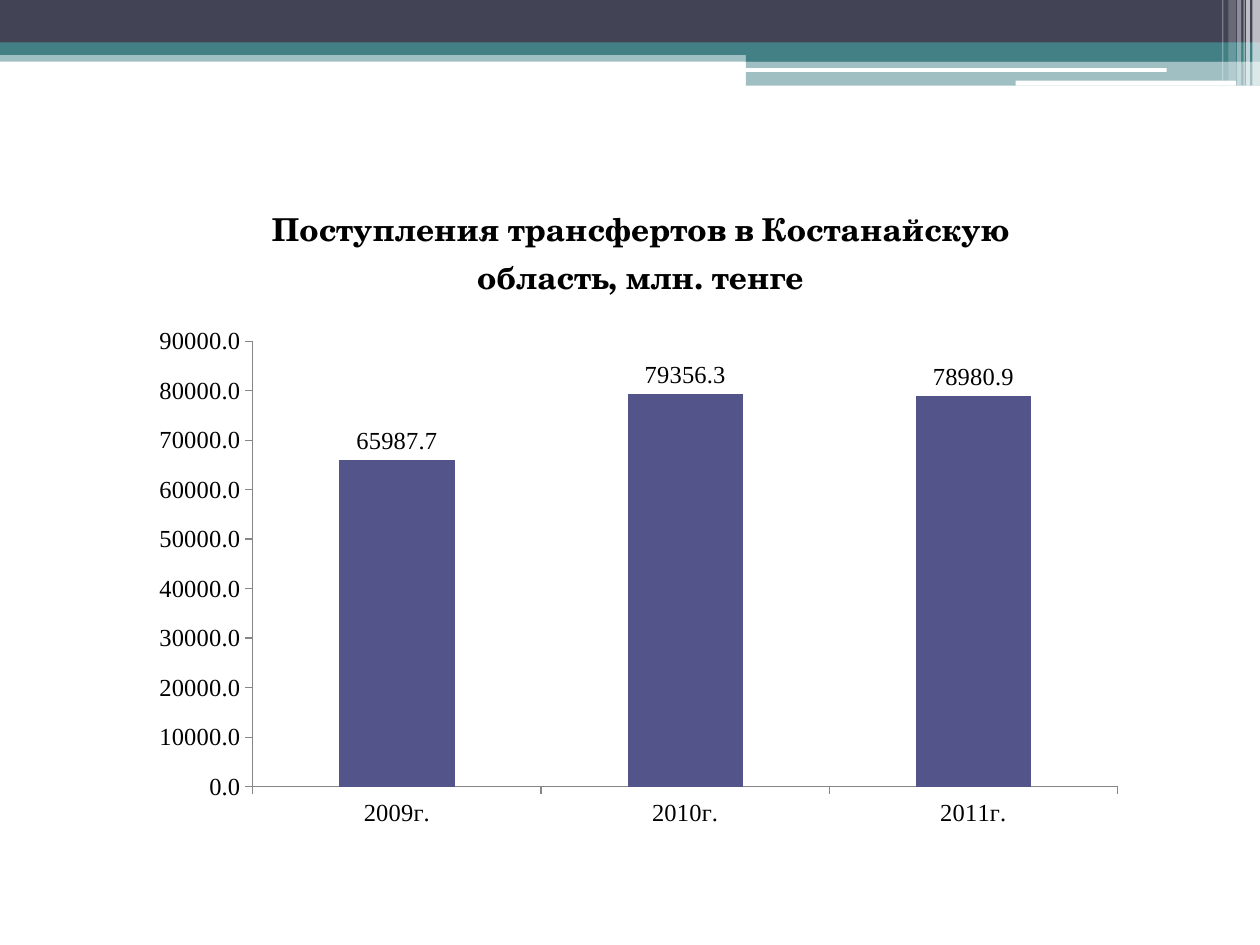
from dataclasses import dataclass

from lxml import etree
from pptx import Presentation
from pptx.chart.data import CategoryChartData
from pptx.dml.color import RGBColor as RGB
from pptx.enum.chart import XL_CHART_TYPE as ChartType
from pptx.enum.chart import XL_LABEL_POSITION as LabelPos
from pptx.enum.chart import XL_TICK_MARK as Tick
from pptx.enum.shapes import MSO_SHAPE as Shape
from pptx.oxml.ns import qn
from pptx.util import Pt


@dataclass(frozen=True)
class Theme:
    """Colours, fonts and type sizes of the slide."""
    navy: str = "424456"
    teal: str = "438086"
    white: str = "FFFFFF"
    bar: str = "53548A"
    axis: str = "868686"
    ink: str = "000000"
    title_font: str = "TeX Gyre Schola"
    label_font: str = "Times New Roman"
    title_size: int = 18
    label_size: int = 14


T = Theme()


def add_band(s, box, color, alpha=100, kind=Shape.RECTANGLE):
    """Add a borderless filled bar with an opacity in percent."""
    sp = s.shapes.add_shape(kind, *map(Pt, box))
    sp.shadow.inherit = False
    sp.line.fill.background()
    sp.fill.solid()
    sp.fill.fore_color.rgb = RGB.from_string(color)
    if alpha < 100:
        clr = sp.fill._xPr.find(qn("a:solidFill"))[0]
        etree.SubElement(clr, qn("a:alpha"), val=str(alpha * 1000))
    return sp


def add_header(s, x, y, w, h):
    """Draw the layered header bands and the light stripes at their right end."""
    split = x + 426.2
    side = x + w - split
    for box, color, alpha in (
        ((x, y + 28.8, w, 6.5), T.teal, 50),
        ((x, y, w, 24.5), T.navy, 100),
        ((x, y + 24.2, w, 7.2), T.teal, 100),
        ((split, y + 28, side, 7.2), T.teal, 100),
        ((split, y + 34.6, side, h - 34.6), T.teal, 50),
    ):
        add_band(s, box, color, alpha)
    for box in ((split - 0.7, y + 38.9, 241.2, 2.2), (x + 580.3, y + 46.1, 126, 2.9)):
        add_band(s, box, T.white, kind=Shape.ROUNDED_RECTANGLE)
    for inset, width, height, alpha in (
        (4.3, 4.3, h, 65), (7.9, 2.2, h, 65), (9.4, 0.7, h, 60),
        (13, 2.2, h, 40), (18, 4.3, h - 2.9, 20), (21.6, 0.7, h - 2.9, 30),
    ):
        add_band(s, (x + w - inset, y, width, height), T.white, alpha)


def style_font(font, name=T.label_font, size=T.label_size, bold=False):
    """Set typeface, size, weight and colour of a font."""
    font.name, font.size, font.bold = name, Pt(size), bold
    font.color.rgb = RGB.from_string(T.ink)


def add_text(tf, text, **fmt):
    """Put one formatted run of text into a text frame."""
    r = tf.paragraphs[0].add_run()
    r.text = text
    style_font(r.font, **fmt)


def style_axis(axis):
    """Give an axis outside ticks, a grey line and no gridlines."""
    axis.has_major_gridlines = False
    axis.major_tick_mark, axis.minor_tick_mark = Tick.OUTSIDE, Tick.NONE
    axis.format.line.color.rgb = RGB.from_string(T.axis)
    axis.format.line.width = Pt(0.75)
    style_font(axis.tick_labels.font)


def place_plot(chart, **fractions):
    """Fix the inner plot area as fractions of the chart."""
    area = chart._chartSpace.find(".//" + qn("c:plotArea"))
    for old in area.findall(qn("c:layout")):
        area.remove(old)
    layout = etree.Element(qn("c:layout"))
    area.insert(0, layout)
    manual = etree.SubElement(layout, qn("c:manualLayout"))
    settings = {"layoutTarget": "inner", "xMode": "edge", "yMode": "edge", **fractions}
    for tag, val in settings.items():
        etree.SubElement(manual, qn(f"c:{tag}"), val=str(val))


def add_transfers_chart(s, x, y, w, h):
    """Add the column chart of transfers by year."""
    data = CategoryChartData(number_format="0.0")
    data.categories = ["2009г.", "2010г.", "2011г."]
    data.add_series("Series 1", (65987.7, 79356.3, 78980.9))
    chart = s.shapes.add_chart(
        ChartType.COLUMN_CLUSTERED, *map(Pt, (x, y, w, h)), data).chart
    style_font(chart.font, name=T.title_font, size=10)
    chart.has_legend = False
    chart.has_title = True
    add_text(chart.chart_title.text_frame,
             "Поступления трансфертов в Костанайскую область, млн. тенге",
             name=T.title_font, size=T.title_size, bold=True)
    chart.chart_title.include_in_layout = False

    for axis in (chart.category_axis, chart.value_axis):
        style_axis(axis)
    values = chart.value_axis
    values.minimum_scale, values.maximum_scale, values.major_unit = 0, 90000, 10000
    values.tick_labels.number_format = "0.0"
    values.tick_labels.number_format_is_linked = False

    plot = chart.plots[0]
    plot.gap_width, plot.vary_by_categories = 150, False
    fill = plot.series[0].format.fill
    fill.solid()
    fill.fore_color.rgb = RGB.from_string(T.bar)
    plot.has_data_labels = True
    labels = plot.data_labels
    labels.show_value, labels.position = True, LabelPos.OUTSIDE_END
    labels.number_format, labels.number_format_is_linked = "0.0", False
    style_font(labels.font)
    place_plot(chart, x=0.11, y=0.25, w=0.87, h=0.67)


def main():
    """Build and save the slide."""
    prs = Presentation()
    prs.slide_width, prs.slide_height = Pt(720), Pt(540)
    s = prs.slides.add_slide(prs.slide_layouts[6])
    add_header(s, 0, 0, 720, 49)
    add_transfers_chart(s, 82, 100, 568, 380)
    prs.save("out.pptx")


if __name__ == "__main__":
    main()
